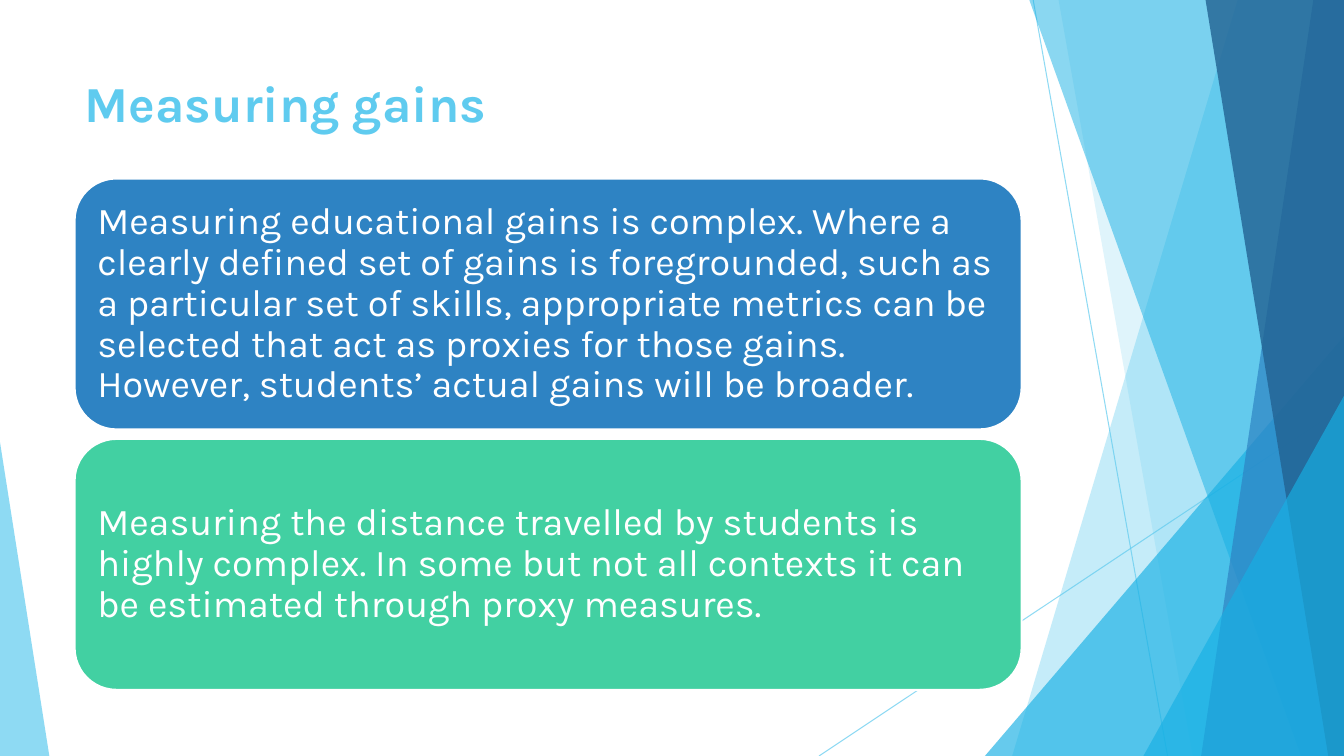
from lxml import etree
from pptx import Presentation
from pptx.dml.color import RGBColor
from pptx.enum.shapes import MSO_CONNECTOR, MSO_SHAPE
from pptx.enum.text import MSO_ANCHOR, PP_ALIGN
from pptx.oxml.ns import qn
from pptx.util import Pt

STRAIGHT = MSO_CONNECTOR.STRAIGHT
TRIANGLE = MSO_SHAPE.ISOSCELES_TRIANGLE
ROUNDED = MSO_SHAPE.ROUNDED_RECTANGLE
TOP, MIDDLE = MSO_ANCHOR.TOP, MSO_ANCHOR.MIDDLE
LEFT = PP_ALIGN.LEFT

PX = 9525
WIDTH, HEIGHT = 1280, 720
BLEED_TOP = -1
FONT = "Karla"
SKY, AZURE, BLUE, NAVY = "5FCBEF", "17B0E4", "2E83C3", "226292"
GREEN, WHITE = "42D0A2", "FFFFFF"

TITLE = "Measuring gains"
TITLE_BOX = (71, 64, 902, 83)
CARDS = [
    ("Measuring educational gains is complex. Where a clearly defined set of gains is "
     "foregrounded, such as a particular set of skills, appropriate metrics can be selected "
     "that act as proxies for those gains. However, students’ actual gains will be broader.",
     BLUE),
    ("Measuring the distance travelled by students is highly complex. In some but not all "
     "contexts it can be estimated through proxy measures.", GREEN),
]
CARD_LEFT, CARD_TOP, CARD_WIDTH, CARD_HEIGHT, CARD_PITCH = 71, 170, 902, 239, 248
CARD_INSET = 10

THIN_LINES = [(984, 0, 1112, 720), (1280, 387, 780, 720)]
BANDS = [
    ("band", (1179, 964), SKY, 36),
    ("band", (1008, 1136), SKY, 20),
    ("triangle", (938, 320, 342, 400, 1), AZURE, 66),
    ("band", (980, 1239), AZURE, 50),
    ("band", (1251, 1144), BLUE, 70),
    ("band", (1148, 1265), NAVY, 80),
    ("triangle", (1089, 377, 191, 343, 1), AZURE, 66),
    ("triangle", (0, 421, 47, 299, 0), SKY, 70),
]


def emu(*lengths):
    return [length * PX for length in lengths]


def paint(color_format, color, opacity=100):
    color_format.rgb = RGBColor.from_string(color)
    if opacity < 100:
        fill = color_format._xFill
        alpha = etree.SubElement(fill.find(qn("a:srgbClr")), qn("a:alpha"))
        alpha.set("val", str(opacity * 1000))


def fill_shape(shape, color, opacity=100):
    shape.shadow.inherit = False
    shape.fill.solid()
    shape.fill.fore_color.rgb = RGBColor.from_string(color)
    set_opacity(shape.element.spPr.find(qn("a:solidFill")), opacity)


def set_opacity(solid_fill, opacity):
    if opacity < 100:
        alpha = etree.SubElement(solid_fill.find(qn("a:srgbClr")), qn("a:alpha"))
        alpha.set("val", str(opacity * 1000))


def style_text(frame, text, size, color, anchor, bold=False):
    frame.word_wrap = True
    frame.vertical_anchor = anchor
    para = frame.paragraphs[0]
    para.text = text
    para.alignment = LEFT
    para.font.name = FONT
    para.font.size = Pt(size)
    para.font.bold = bold
    para.font.color.rgb = RGBColor.from_string(color)
    return para


def add_thin_line(page, ends):
    line = page.shapes.add_connector(STRAIGHT, *emu(*ends))
    line.line.width = Pt(0.75)
    line.line.color.rgb = RGBColor.from_string(SKY)
    properties = line.element.spPr
    set_opacity(properties.find(qn("a:ln")).find(qn("a:solidFill")), 70)
    etree.SubElement(properties, qn("a:effectLst"))


def add_band(page, top_x, bottom_x):
    builder = page.shapes.build_freeform(top_x, BLEED_TOP, PX)
    builder.add_line_segments([(WIDTH, BLEED_TOP), (WIDTH, HEIGHT), (bottom_x, HEIGHT)])
    return builder.convert_to_shape()


def add_triangle(page, left, top, width, height, apex):
    shape = page.shapes.add_shape(TRIANGLE, *emu(left, top, width, height))
    shape.adjustments[0] = apex
    return shape


def add_card(page, index, text, color):
    top = CARD_TOP + index * CARD_PITCH
    card = page.shapes.add_shape(ROUNDED, *emu(CARD_LEFT, top, CARD_WIDTH, CARD_HEIGHT))
    fill_shape(card, color)
    card.line.width = Pt(1.5)
    card.line.color.rgb = RGBColor.from_string(WHITE)
    frame = card.text_frame
    frame.margin_left = frame.margin_right = CARD_INSET * PX
    frame.margin_top = frame.margin_bottom = CARD_INSET * PX
    style_text(frame, text, 27, WHITE, MIDDLE).line_spacing = 0.9


def main():
    deck = Presentation()
    deck.slide_width, deck.slide_height = emu(WIDTH, HEIGHT)
    page = deck.slides.add_slide(deck.slide_layouts[5])

    title = page.shapes.title
    title.left, title.top, title.width, title.height = emu(*TITLE_BOX)
    style_text(title.text_frame, TITLE, 36, SKY, TOP, bold=True)

    for ends in THIN_LINES:
        add_thin_line(page, ends)
    makers = {"band": add_band, "triangle": add_triangle}
    for kind, geometry, color, opacity in BANDS:
        shape = makers[kind](page, *geometry)
        fill_shape(shape, color, opacity)
        shape.line.fill.background()
    for index, (text, color) in enumerate(CARDS):
        add_card(page, index, text, color)

    deck.save("out.pptx")


if __name__ == "__main__":
    main()
